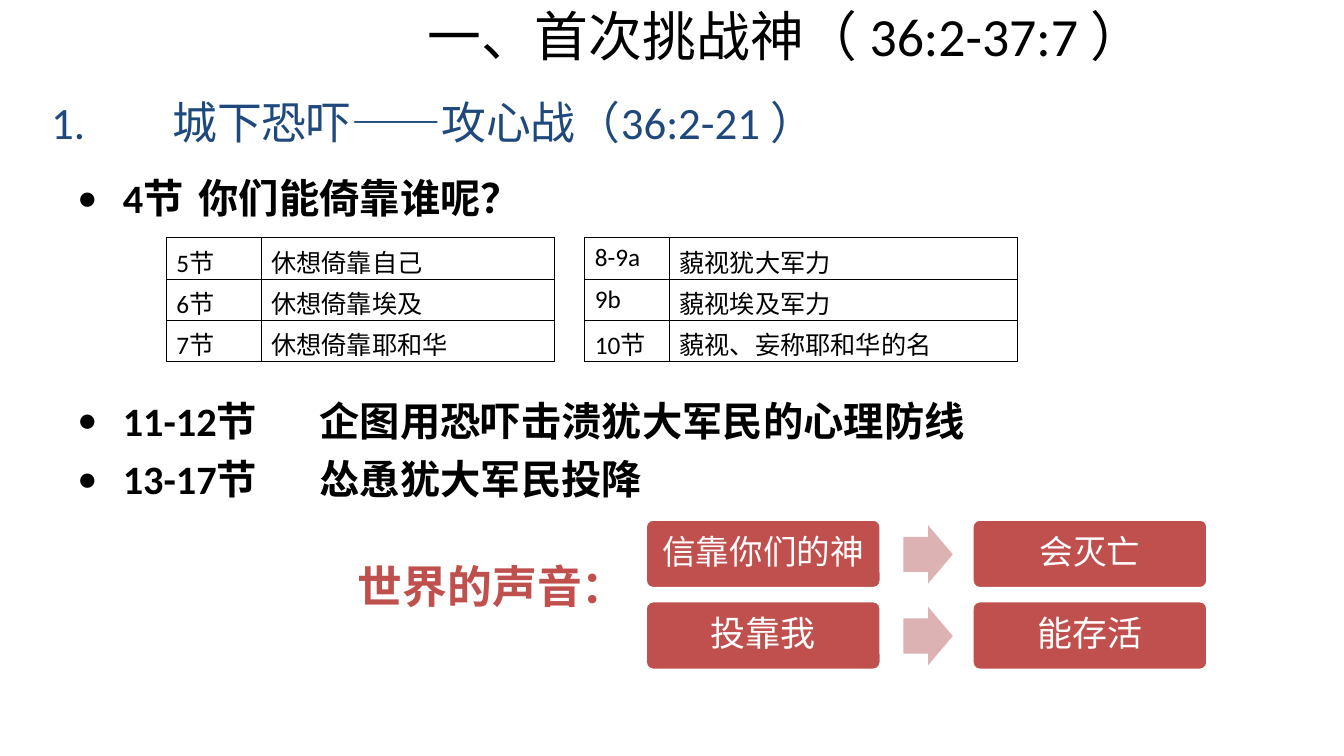
"""Build a slide with two bullet sections, two tables and two arrow rows."""
from lxml import etree
from pptx import Presentation
from pptx.dml.color import RGBColor
from pptx.enum.shapes import MSO_SHAPE
from pptx.enum.text import MSO_ANCHOR, PP_ALIGN
from pptx.oxml.ns import qn
from pptx.util import Inches, Pt

ROUNDED = MSO_SHAPE.ROUNDED_RECTANGLE
ARROW = MSO_SHAPE.RIGHT_ARROW
TOP, MIDDLE = MSO_ANCHOR.TOP, MSO_ANCHOR.MIDDLE
LEFT, CENTER = PP_ALIGN.LEFT, PP_ALIGN.CENTER
COLORS = {"black": "000000", "white": "FFFFFF", "navy": "1F497D",
          "red": "C0504D", "pink": "DCB3B2"}
TAB_STEP = 1.2


def write(frame, text, size=18, color="black", bold=False, align=LEFT,
          anchor=TOP, line_spacing=None, space_before=0, bullet=False):
    """Fill a text frame with one paragraph per line of text."""
    frame.word_wrap = True
    frame.vertical_anchor = anchor
    for index, line in enumerate(text.split("\n")):
        paragraph = frame.add_paragraph() if index else frame.paragraphs[0]
        paragraph.alignment = align
        if line_spacing:
            paragraph.line_spacing = line_spacing
        if index:
            paragraph.space_before = Pt(space_before)
        properties = paragraph._p.get_or_add_pPr()
        if bullet:
            properties.set("marL", str(Inches(0.45)))
            properties.set("indent", str(Inches(-0.45)))
            etree.SubElement(properties, qn("a:buFont"), typeface="Calibri")
            etree.SubElement(properties, qn("a:buChar"), char="•")
        if "\t" in line:
            tabs = etree.SubElement(properties, qn("a:tabLst"))
            for step in (1, 2):
                etree.SubElement(tabs, qn("a:tab"), algn="l",
                                 pos=str(Inches(TAB_STEP * step)))
        run = paragraph.add_run()
        run.text = line
        run.font.name = "Calibri"
        run.font.size = Pt(size)
        run.font.bold = bold
        run.font.color.rgb = RGBColor.from_string(COLORS[color])


def add_box(preset, left, top, width, height, fill):
    """Add a filled preset shape without outline or shadow."""
    shape = slide.shapes.add_shape(preset, Inches(left), Inches(top),
                                   Inches(width), Inches(height))
    shape.shadow.inherit = False
    shape.fill.solid()
    shape.fill.fore_color.rgb = RGBColor.from_string(COLORS[fill])
    shape.line.fill.background()
    return shape


presentation = Presentation()
presentation.slide_width = Inches(13.33)
presentation.slide_height = Inches(7.5)
slide = presentation.slides.add_slide(presentation.slide_layouts[6])

texts = [
    ((0.41, 0.73, 12, 0.69), "1.\t城下恐吓——攻心战（36:2-21 ）",
     {"size": 32, "color": "navy", "anchor": MIDDLE, "line_spacing": 1.5}),
    ((0.67, 1.67, 12, 0.6), "4节\t你们能倚靠谁呢？",
     {"size": 28.8, "bold": True, "bullet": True}),
    ((0.67, 3.88, 12, 1.2),
     "11-12节\t企图用恐吓击溃犹大军民的心理防线\n13-17节\t怂恿犹大军民投降",
     {"size": 28.8, "bold": True, "bullet": True, "space_before": 7}),
    ((3.45, 5.49, 2.85, 0.64), "世界的声音：",
     {"size": 32, "color": "red", "bold": True}),
    ((4.14, 0, 7.66, 0.69), "一、首次挑战神（ 36:2-37:7 ）",
     {"size": 38.4, "anchor": MIDDLE}),
]
for bounds, text, style in texts:
    text_box = slide.shapes.add_textbox(*map(Inches, bounds))
    write(text_box.text_frame, text, **style)

choices = [("信靠你们的神", "会灭亡", 24), ("投靠我", "能存活", 25)]
for index, (choice, outcome, size) in enumerate(choices):
    top = 5.16 + 0.81 * index
    for left, label in ((6.41, choice), (9.65, outcome)):
        box = add_box(ROUNDED, left, top, 2.32, 0.67, "red")
        box.adjustments[0] = 0.1
        box.line.color.rgb = RGBColor.from_string(COLORS["white"])
        box.line.width = Pt(1)
        write(box.text_frame, label, size=size, color="white", align=CENTER,
              anchor=MIDDLE, line_spacing=0.9)
    arrow = add_box(ARROW, 8.96, top + 0.05, 0.49, 0.58, "pink")
    arrow.adjustments[0] = 0.6
    arrow.adjustments[1] = 0.5

tables = [
    (1.65, (0.94, 2.91),
     [("5节", "休想倚靠自己"), ("6节", "休想倚靠埃及"), ("7节", "休想倚靠耶和华")]),
    (5.8, (0.84, 3.45),
     [("8-9a", "藐视犹大军力"), ("9b", "藐视埃及军力"),
      ("10节", "藐视、妄称耶和华的名")]),
]
for left, widths, rows in tables:
    table = slide.shapes.add_table(
        len(rows), len(widths), Inches(left), Inches(2.36),
        Inches(sum(widths)), Inches(0.41 * len(rows))).table
    table.first_row = False
    table.horz_banding = False
    for column, width in zip(table.columns, widths):
        column.width = Inches(width)
    for row, values in zip(table.rows, rows):
        row.height = Inches(0.41)
        for cell, value in zip(row.cells, values):
            write(cell.text_frame, value)
            cell.margin_bottom = 0
            properties = cell._tc.get_or_add_tcPr()
            for side in ("lnL", "lnR", "lnT", "lnB"):
                border = etree.SubElement(properties, qn(f"a:{side}"),
                                          w=str(Pt(1)))
                fill = etree.SubElement(border, qn("a:solidFill"))
                etree.SubElement(fill, qn("a:srgbClr"), val=COLORS["black"])
            cell.fill.background()

presentation.save("out.pptx")
